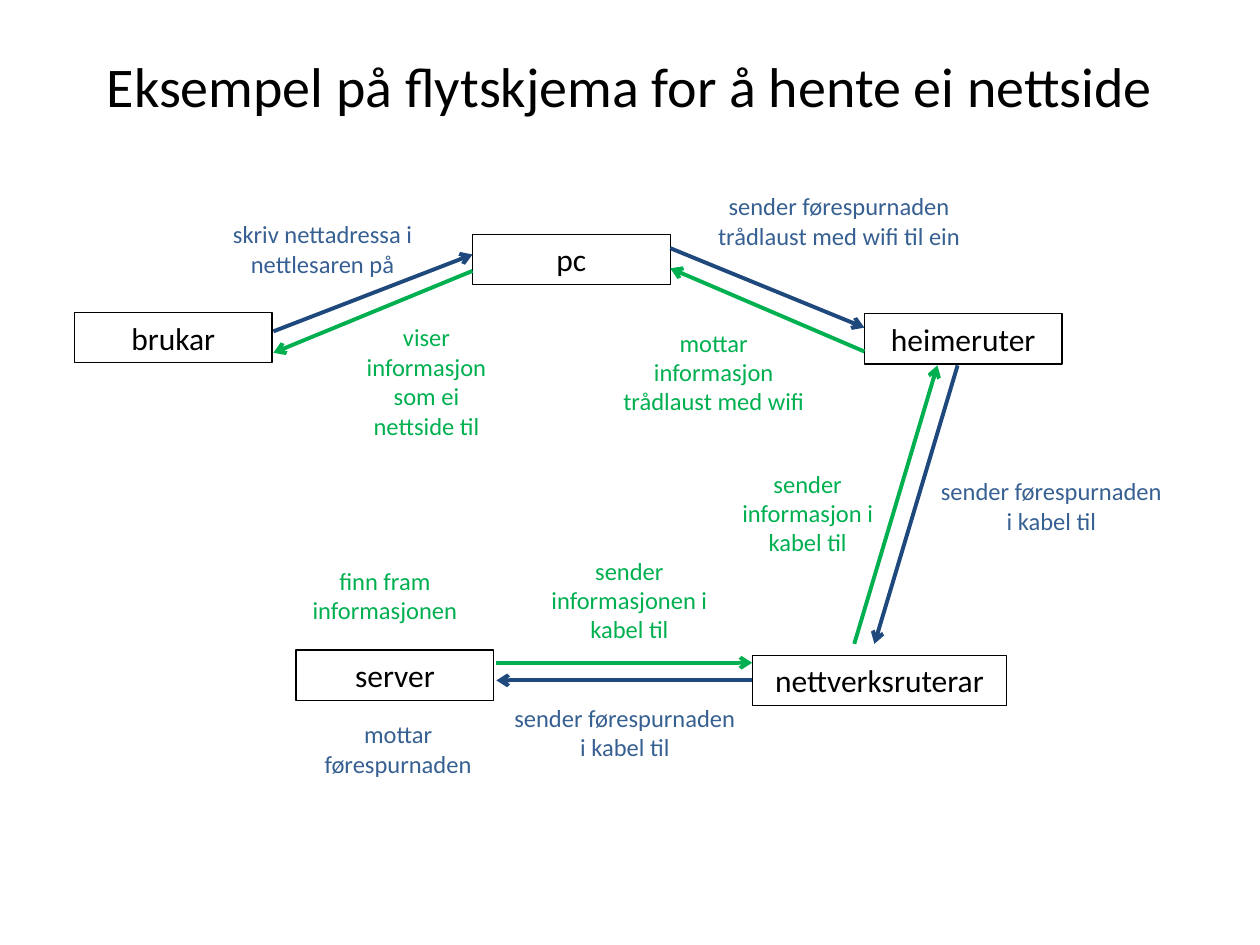
"""Build a flow chart slide that shows how a web page is fetched."""
import pptx
import pptx.dml.color
import pptx.enum.shapes
import pptx.enum.text
import pptx.oxml
import pptx.oxml.ns
import pptx.util

BLACK = "000000"
REQUEST_LINE = "1F497D"
REQUEST_TEXT = "376092"
REPLY = "00B050"
Inches = pptx.util.Inches


def rgb(code):
    return pptx.dml.color.RGBColor.from_string(code)


class FlowSlide:
    font = "Calibri"
    title_size = 32
    node_size = 18
    label_size = 14
    node_height = 0.4

    def __init__(self, presentation):
        self.slide = presentation.slides.add_slide(presentation.slide_layouts[5])

    def add_lines(self, frame, lines, size, color, anchor):
        frame.word_wrap = True
        frame.vertical_anchor = anchor
        for index, line in enumerate(lines):
            paragraph = frame.add_paragraph() if index else frame.paragraphs[0]
            paragraph.alignment = pptx.enum.text.PP_ALIGN.CENTER
            run = paragraph.add_run()
            run.text = line
            run.font.name = self.font
            run.font.size = pptx.util.Pt(size)
            run.font.color.rgb = rgb(color)

    def title(self, text, left, top, width, height):
        heading = self.slide.shapes.title
        heading.left, heading.top = Inches(left), Inches(top)
        heading.width, heading.height = Inches(width), Inches(height)
        self.add_lines(heading.text_frame, [text], self.title_size, BLACK,
                       pptx.enum.text.MSO_ANCHOR.MIDDLE)

    def node(self, text, left, top, width=1.57):
        box = self.slide.shapes.add_shape(
            pptx.enum.shapes.MSO_SHAPE.RECTANGLE,
            Inches(left), Inches(top), Inches(width), Inches(self.node_height))
        box.shadow.inherit = False
        box.fill.background()
        box.line.color.rgb = rgb(BLACK)
        box.line.width = pptx.util.Pt(0.75)
        self.add_lines(box.text_frame, [text], self.node_size, BLACK,
                       pptx.enum.text.MSO_ANCHOR.TOP)
        box.text_frame.auto_size = pptx.enum.text.MSO_AUTO_SIZE.SHAPE_TO_FIT_TEXT

    def label(self, lines, color, left, top, width, height):
        caption = self.slide.shapes.add_textbox(
            Inches(left), Inches(top), Inches(width), Inches(height))
        self.add_lines(caption.text_frame, lines, self.label_size, color,
                       pptx.enum.text.MSO_ANCHOR.TOP)
        caption.text_frame.auto_size = pptx.enum.text.MSO_AUTO_SIZE.SHAPE_TO_FIT_TEXT

    def arrow(self, color, start, end):
        connector = self.slide.shapes.add_connector(
            pptx.enum.shapes.MSO_CONNECTOR.STRAIGHT,
            *(Inches(value) for value in (*start, *end)))
        connector.line.color.rgb = rgb(color)
        connector.line.width = pptx.util.Pt(2.25)
        namespace = pptx.oxml.ns.nsdecls("a")
        connector.get_or_add_ln().append(
            pptx.oxml.parse_xml(f'<a:tailEnd {namespace} type="arrow"/>'))
        connector.element.spPr.append(
            pptx.oxml.parse_xml(f'<a:effectLst {namespace}/>'))


def main():
    presentation = pptx.Presentation()
    presentation.slide_width = Inches(10)
    presentation.slide_height = Inches(7.5)
    flow = FlowSlide(presentation)
    flow.title("Eksempel på flytskjema for å hente ei nettside", 0.5, 0.05, 9, 1.25)

    flow.node("brukar", 0.59, 2.48)
    flow.node("pc", 3.75, 1.86)
    flow.node("heimeruter", 6.86, 2.49)
    flow.node("nettverksruterar", 5.97, 5.2, 2.02)
    flow.node("server", 2.35, 5.16)

    request_steps = [
        ((2.17, 2.63), (3.75, 2.02)),
        ((5.32, 1.97), (6.86, 2.6)),
        ((7.6, 2.9), (6.94, 5.11)),
        ((5.97, 5.4), (3.94, 5.4)),
    ]
    reply_steps = [
        ((3.94, 5.26), (5.97, 5.26)),
        ((6.78, 5.11), (7.44, 2.9)),
        ((6.86, 2.79), (5.32, 2.13)),
        ((3.75, 2.15), (2.17, 2.8)),
    ]
    for color, steps in ((REQUEST_LINE, request_steps), (REPLY, reply_steps)):
        for start, end in steps:
            flow.arrow(color, start, end)

    request_labels = [
        (["skriv nettadressa i nettlesaren på"], 1.64, 1.69, 1.84, 0.57),
        (["sender førespurnaden trådlaust med wifi til ein"], 5.41, 1.47, 2.5, 0.57),
        (["sender førespurnaden i kabel til"], 7.36, 3.73, 1.97, 0.57),
        (["sender førespurnaden i kabel til"], 3.98, 5.53, 1.96, 0.57),
        (["mottar førespurnaden"], 2.4, 5.66, 1.52, 0.57),
    ]
    reply_labels = [
        (["finn fram informasjonen"], 2.17, 4.44, 1.77, 0.57),
        (["sender informasjonen i kabel til"], 4.24, 4.36, 1.51, 0.81),
        (["sender informasjon i", "kabel til"], 5.62, 3.67, 1.58, 0.81),
        (["mottar informasjon trådlaust med wifi"], 4.83, 2.55, 1.67, 0.81),
        (["viser informasjon som ei nettside til"], 2.71, 2.51, 1.35, 1.04),
    ]
    for color, labels in ((REQUEST_TEXT, request_labels), (REPLY, reply_labels)):
        for lines, *place in labels:
            flow.label(lines, color, *place)

    presentation.save("out.pptx")


if __name__ == "__main__":
    main()
